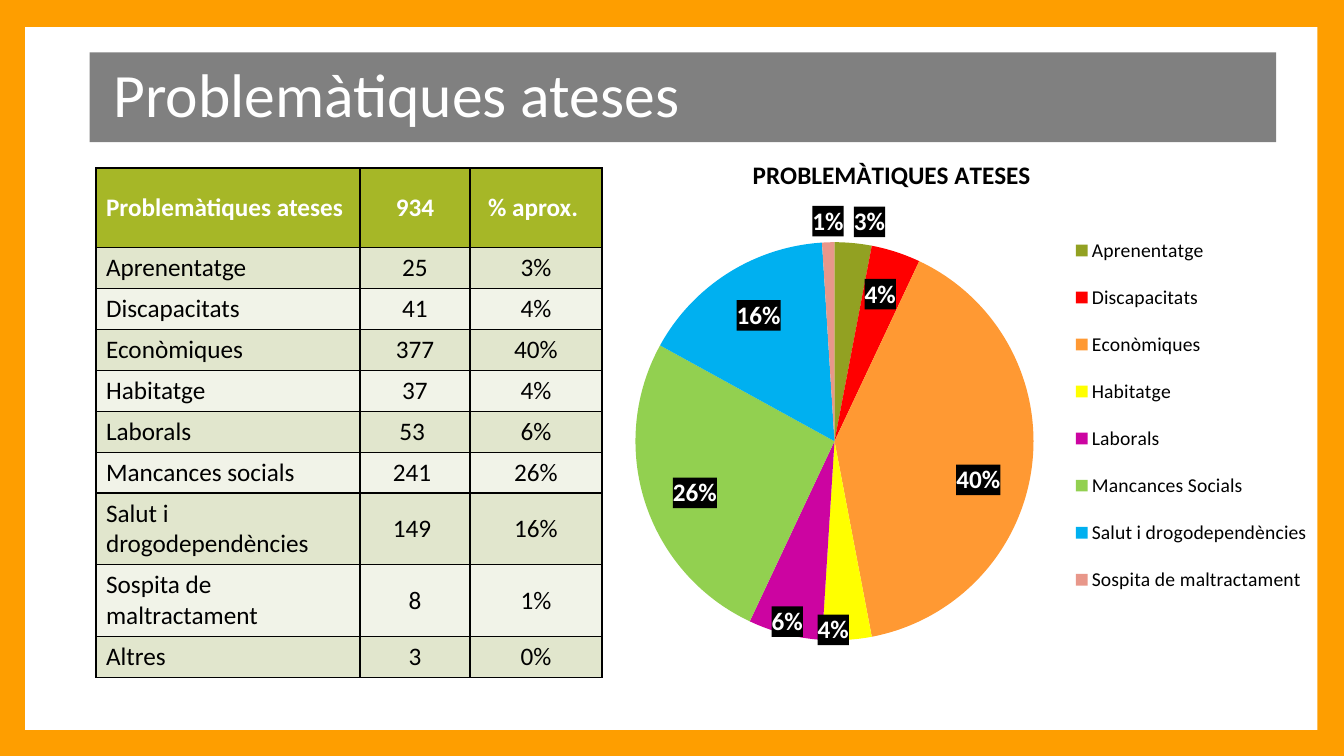
from dataclasses import dataclass

import lxml.etree
import pptx
import pptx.chart.data
import pptx.dml.color
import pptx.enum.chart
import pptx.enum.shapes
import pptx.enum.text
import pptx.oxml
import pptx.oxml.ns
import pptx.util

Pt = pptx.util.Pt
qn = pptx.oxml.ns.qn
FONT = "Calibri"
HUES = {
    "frame": "FE9E00", "white": "FFFFFF", "black": "000000", "bar": "808080",
    "head": "A6B727", "odd": "E1E6CD", "even": "F1F3E8",
}


@dataclass
class Box:
    left: float
    top: float
    width: float
    height: float

    def lengths(self) -> list:
        return [Pt(v) for v in (self.left, self.top, self.width, self.height)]


@dataclass
class Row:
    name: str
    count: str
    share: str
    height: float = 29.2


@dataclass
class Slice:
    name: str
    value: int
    hue: str
    shift: tuple | None = None  # label offset from the slice centre


ROWS = [
    Row("Problemàtiques ateses", "934", "% aprox. ", 57),
    Row("Aprenentatge", "25", "3%"),
    Row("Discapacitats", "41", "4%"),
    Row("Econòmiques", "377", "40%"),
    Row("Habitatge", "37", "4%"),
    Row("Laborals", "53 ", "6%"),
    Row("Mancances socials", "241 ", "26%"),
    Row("Salut i drogodependències", "149 ", "16%", 51.2),
    Row("Sospita de maltractament", "8", "1%", 51.2),
    Row("Altres", "3", "0%"),
]
WIDTHS = [188.6, 78.5, 94.3]
SLICES = [
    Slice("Aprenentatge", 3, "92A122"),
    Slice("Discapacitats", 4, "FF0000", (0.02, -0.1)),
    Slice("Econòmiques", 40, "FF9933", (0.06, 0.05)),
    Slice("Habitatge", 4, "FFFF00", (-0.01, 0.17)),
    Slice("Laborals", 6, "CC04A1", (-0.03, 0.16)),
    Slice("Mancances Socials", 26, "92D050", (-0.06, 0.04)),
    Slice("Salut i drogodependències", 16, "00B0F0", (-0.03, -0.08)),
    Slice("Sospita de maltractament", 1, "E8978A"),
]


def rgb(hue: str):
    return pptx.dml.color.RGBColor.from_string(HUES.get(hue, hue))


def paint(fill, hue: str) -> None:
    fill.solid()
    fill.fore_color.rgb = rgb(hue)


def style(font, size: float, hue: str, bold: bool = False) -> None:
    font.name, font.size, font.bold = FONT, Pt(size), bold
    font.color.rgb = rgb(hue)


def add_rect(slide, box: Box, hue: str):
    rect = slide.shapes.add_shape(
        pptx.enum.shapes.MSO_SHAPE.RECTANGLE, *box.lengths())
    rect.shadow.inherit = False
    paint(rect.fill, hue)
    rect.line.fill.background()
    return rect


def add_edges(cell) -> None:
    props = cell._tc.get_or_add_tcPr()
    for spot, side in enumerate(("lnL", "lnR", "lnT", "lnB")):
        edge = lxml.etree.Element(qn(f"a:{side}"), w=str(Pt(1)))
        fill = lxml.etree.SubElement(edge, qn("a:solidFill"))
        lxml.etree.SubElement(fill, qn("a:srgbClr"), val=HUES["black"])
        props.insert(spot, edge)


def add_grid(slide, box: Box) -> None:
    table = slide.shapes.add_table(
        len(ROWS), len(WIDTHS), *box.lengths()).table
    for col, width in zip(table.columns, WIDTHS):
        col.width = Pt(width)
    for i, row in enumerate(ROWS):
        table.rows[i].height = Pt(row.height)
        hue = "head" if i == 0 else "odd" if i % 2 else "even"
        for j, text in enumerate((row.name, row.count, row.share)):
            cell = table.cell(i, j)
            cell.text = text
            cell.vertical_anchor = pptx.enum.text.MSO_ANCHOR.MIDDLE
            paint(cell.fill, hue)
            add_edges(cell)
            para = cell.text_frame.paragraphs[0]
            style(para.font, 18, "black" if i else "white", i == 0)
            if j:
                para.alignment = pptx.enum.text.PP_ALIGN.CENTER


def layout(spots: dict, edge: bool = True, inner: bool = False):
    root = lxml.etree.Element(qn("c:layout"))
    node = lxml.etree.SubElement(root, qn("c:manualLayout"))
    if inner:
        lxml.etree.SubElement(node, qn("c:layoutTarget"), val="inner")
    if edge:
        for key in ("xMode", "yMode"):
            lxml.etree.SubElement(node, qn(f"c:{key}"), val="edge")
    for key, value in spots.items():
        lxml.etree.SubElement(node, qn(f"c:{key}"), val=str(value))
    return root


def place(parent, node, after: str) -> None:
    for old in parent.findall(qn("c:layout")):
        parent.remove(old)
    mark = parent.find(qn(after)) if after else None
    if mark is None:
        parent.insert(0, node)
    else:
        mark.addnext(node)


def back(parent) -> None:
    """Put a black box behind a label."""
    node = lxml.etree.Element(qn("c:spPr"))
    fill = lxml.etree.SubElement(node, qn("a:solidFill"))
    lxml.etree.SubElement(fill, qn("a:srgbClr"), val=HUES["black"])
    parent.find(qn("c:txPr")).addprevious(node)


def add_pie(slide, box: Box) -> None:
    kinds = pptx.enum.chart
    data = pptx.chart.data.CategoryChartData()
    data.categories = [s.name for s in SLICES]
    data.add_series("PROBLEMÀTIQUES ATESES", [s.value for s in SLICES])
    chart = slide.shapes.add_chart(
        kinds.XL_CHART_TYPE.PIE, *box.lengths(), data).chart
    style(chart.font, 18, "black")

    # Title, legend and plot places
    chart.has_title = True
    title = chart.chart_title
    title.text_frame.text = "PROBLEMÀTIQUES ATESES"
    style(title.text_frame.paragraphs[0].font, 18, "black", True)
    place(title._element, layout({"x": 0.23, "y": 0.02}), "c:tx")
    chart.has_legend = True
    legend = chart.legend
    legend.position = kinds.XL_LEGEND_POSITION.RIGHT
    legend.include_in_layout = False
    style(legend.font, 14, "black")
    place(legend._element,
          layout({"x": 0.65, "y": 0.14, "w": 0.34, "h": 0.76}), "c:legendPos")
    area = chart._chartSpace.chart.plotArea
    place(area, layout({"x": 0.08, "y": 0.19, "w": 0.53, "h": 0.76},
                       inner=True), "")

    # Slices and labels
    plot = chart.plots[0]
    plot.vary_by_categories = True
    series = plot.series[0]
    labels = series.data_labels
    labels.show_value, labels.show_percentage = False, True
    labels.number_format, labels.number_format_is_linked = "0%", False
    labels.position = kinds.XL_LABEL_POSITION.OUTSIDE_END
    style(labels.font, 18, "white", True)
    root = labels._element
    back(root)
    for i, part in enumerate(SLICES):
        point = series.points[i]
        paint(point.format.fill, part.hue)
        if part.shift:
            label = point.data_label
            style(label.font, 18, "white", True)
            label.position = kinds.XL_LABEL_POSITION.CENTER
            node = root.findall(qn("c:dLbl"))[-1]
            node.find(qn("c:showVal")).set("val", "0")
            node.find(qn("c:showPercent")).set("val", "1")
            back(node)
            place(node, layout(dict(zip("xy", part.shift)), edge=False),
                  "c:idx")
    for node in root.findall(qn("c:showLeaderLines")):
        node.set("val", "0")


def main() -> None:
    deck = pptx.Presentation()
    deck.slide_width, deck.slide_height = Pt(960), Pt(540)
    slide = deck.slides.add_slide(deck.slide_layouts[6])

    # Orange frame around a white page
    paint(slide.background.fill, "frame")
    add_rect(slide, Box(18, 19.4, 923, 502), "white")

    add_grid(slide, Box(68.6, 120, 361.4, 364))

    # Title bar
    bar = add_rect(slide, Box(64, 37.5, 847.5, 64), "bar")
    frame = bar.text_frame
    frame.text = "Problemàtiques ateses"
    frame.word_wrap = True
    frame.margin_left = Pt(17)
    frame.vertical_anchor = pptx.enum.text.MSO_ANCHOR.MIDDLE
    para = frame.paragraphs[0]
    para.alignment = pptx.enum.text.PP_ALIGN.LEFT
    para.line_spacing = 0.9
    style(para.font, 44, "white")

    add_pie(slide, Box(411, 101.5, 536.5, 375))
    deck.save("out.pptx")


if __name__ == "__main__":
    main()
